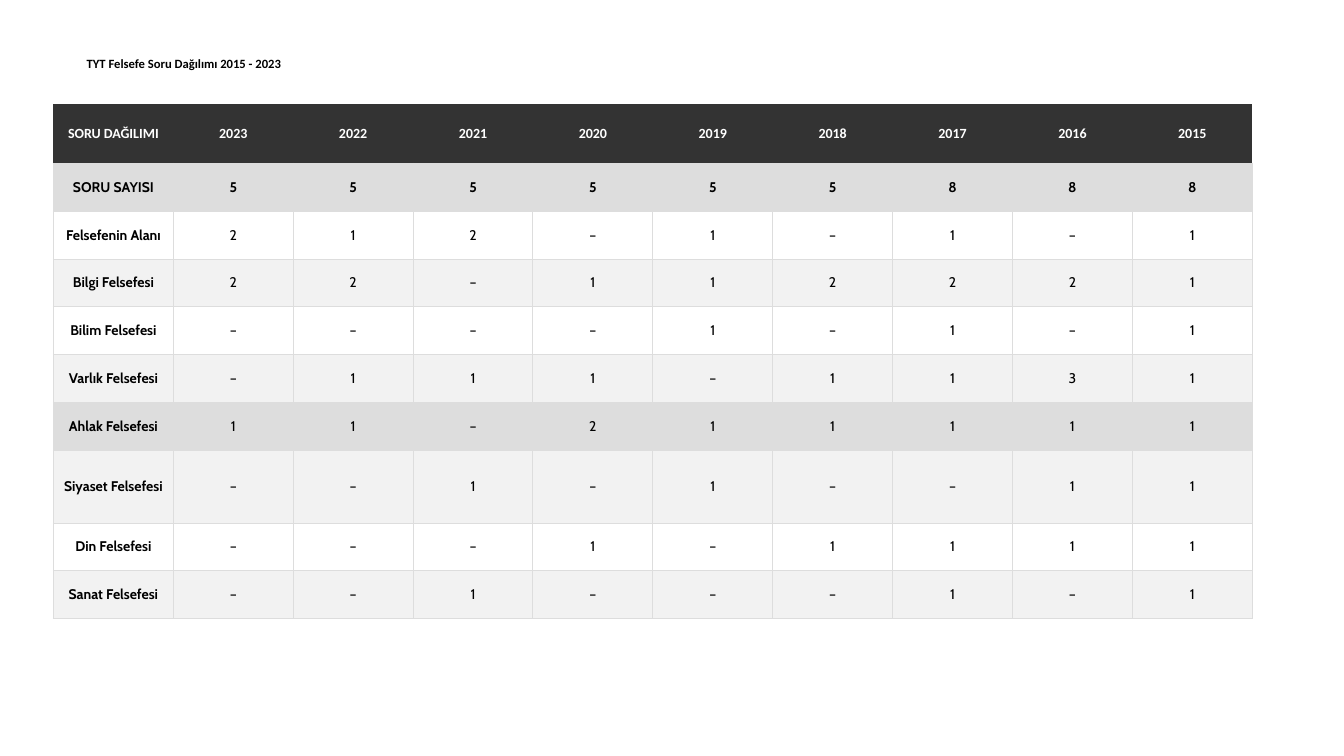
from pptx import Presentation
from pptx.dml.color import RGBColor
from pptx.enum import text as tx
from pptx.oxml import parse_xml
from pptx.oxml.ns import nsdecls
from pptx.util import Inches, Pt

BLACK = RGBColor(0x00, 0x00, 0x00)
WHITE = RGBColor(0xFF, 0xFF, 0xFF)
DARK = RGBColor(0x33, 0x33, 0x33)
GREY = RGBColor(0xDD, 0xDD, 0xDD)
PALE = RGBColor(0xF2, 0xF2, 0xF2)


def write(frame, words, size=10, font="Cabin", color=BLACK, bold=False,
          align=tx.PP_ALIGN.CENTER):
    para = frame.paragraphs[0]
    para.alignment = align
    run = para.add_run()
    run.text = words
    run.font.size = Pt(size)
    run.font.name = font
    run.font.bold = bold
    run.font.color.rgb = color


def border(cell, sides):
    props = cell._tc.get_or_add_tcPr()
    for side in "LRTB":
        fill = "<a:noFill/>"
        if side in sides:
            fill = f'<a:solidFill><a:srgbClr val="{GREY}"/></a:solidFill>'
        props.append(parse_xml(
            f'<a:ln{side} {nsdecls("a")} w="{Pt(0.75)}">{fill}</a:ln{side}>'))


deck = Presentation()
deck.slide_width = Inches(13.33)
deck.slide_height = Inches(7.5)
slide = deck.slides.add_slide(deck.slide_layouts[5])

title = slide.shapes.title
title.left, title.top = Inches(0.76), Inches(0.53)
title.width, title.height = Inches(12.57), Inches(0.5)
title.fill.solid()
title.fill.fore_color.rgb = WHITE
frame = title.text_frame
frame.word_wrap = False
frame.auto_size = tx.MSO_AUTO_SIZE.NONE
frame.vertical_anchor = tx.MSO_ANCHOR.TOP
frame.margin_top = Inches(0.02)
write(frame, "TYT Felsefe Soru Dağılımı 2015 - 2023", size=9, font="Calibri",
      bold=True, align=tx.PP_ALIGN.LEFT)

years = [str(year) for year in range(2023, 2014, -1)]
rows = [
    ("SORU DAĞILIMI", years, DARK),
    ("SORU SAYISI", "555555888", GREY),
    ("Felsefenin Alanı", "212–1–1–1", WHITE),
    ("Bilgi Felsefesi", "22–112221", PALE),
    ("Bilim Felsefesi", "––––1–1–1", WHITE),
    ("Varlık Felsefesi", "–111–1131", PALE),
    ("Ahlak Felsefesi", "11–211111", GREY),
    ("Siyaset Felsefesi", "––1–1––11", PALE),
    ("Din Felsefesi", "–––1–1111", WHITE),
    ("Sanat Felsefesi", "––1–––1–1", PALE),
]
wide, high = Inches(11.89), Inches(5.11)
tall = {0: Inches(0.59), 7: Inches(0.72)}
rest = (high - sum(tall.values())) // (len(rows) - len(tall))

table = slide.shapes.add_table(len(rows), 10, Inches(0.53), Inches(1.03),
                               wide, high).table
table.first_row = False
table.horz_banding = False
for col in table.columns:
    col.width = wide // 10

for r, (name, counts, shade) in enumerate(rows):
    head = r == 0
    table.rows[r].height = tall.get(r, rest)
    for c, words in enumerate([name, *counts]):
        cell = table.cell(r, c)
        border(cell, "B" if head else "LRTB")
        cell.fill.solid()
        cell.fill.fore_color.rgb = shade
        cell.vertical_anchor = tx.MSO_ANCHOR.MIDDLE
        cell.margin_left = cell.margin_right = Inches(0.01 if head else 0.08)
        cell.margin_top = cell.margin_bottom = Inches(0.12 if head else 0.08)
        write(cell.text_frame, words, font="Calibri" if head else "Cabin",
              color=WHITE if head else BLACK, bold=r < 2 or c == 0)

deck.save("out.pptx")
